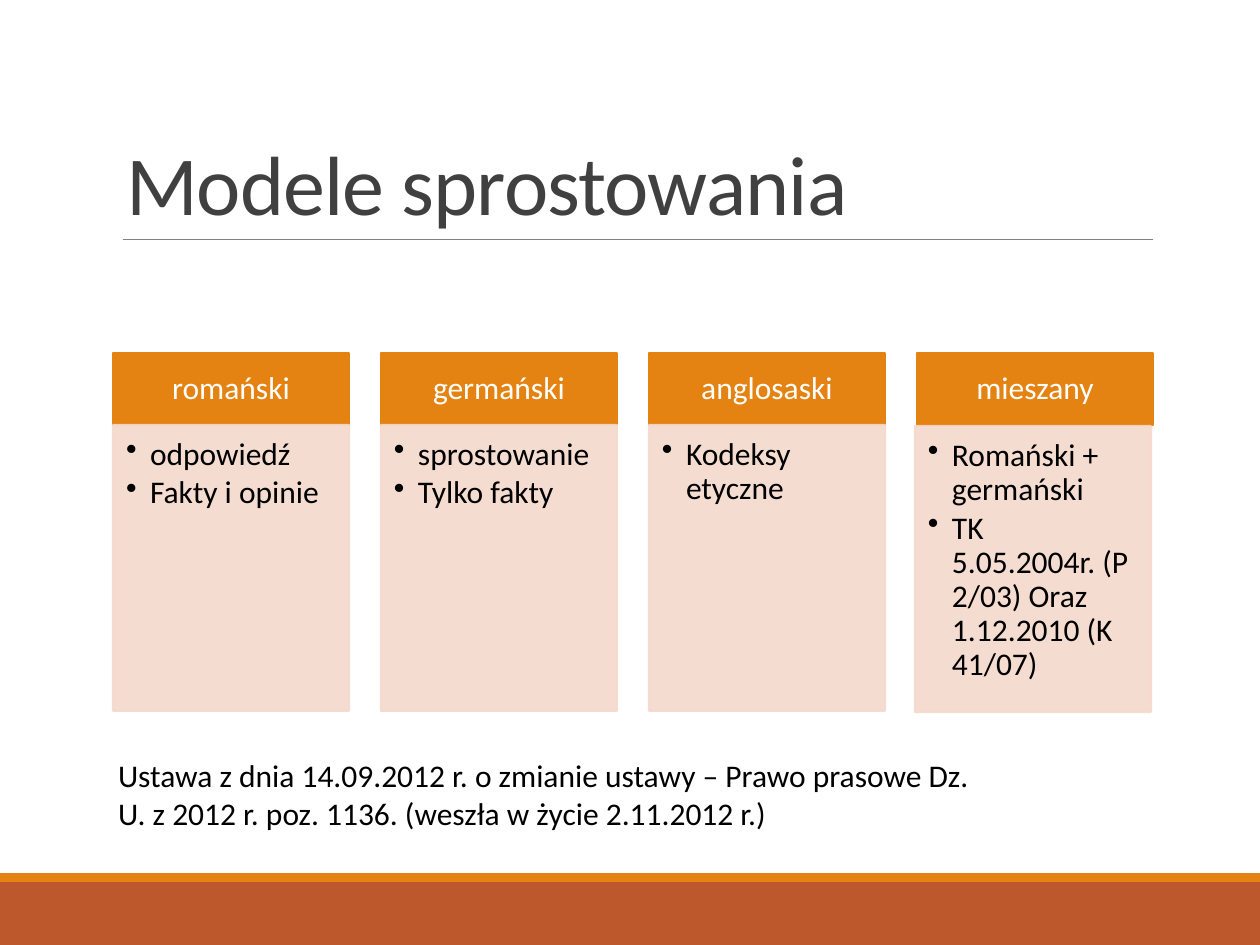
from dataclasses import dataclass

import lxml.etree
import pptx
import pptx.dml.color
import pptx.enum.shapes
import pptx.enum.text
import pptx.oxml.ns
import pptx.util

EMU_PER_PX = 914400 / 126
FONT = "Calibri"
COLORS = {
    "orange": "E48312",
    "rust": "BD582C",
    "peach": "F5D9CC",
    "rule": "808080",
    "title": "404040",
    "white": "FFFFFF",
    "black": "000000",
}
ANCHOR = pptx.enum.text.MSO_ANCHOR
ALIGN = pptx.enum.text.PP_ALIGN


@dataclass(frozen=True)
class Area:
    left: int
    top: int
    width: int
    height: int


@dataclass(frozen=True)
class Model:
    name: str
    points: tuple[str, ...]
    shift_x: int = 0
    shift_y: int = 0


MODELS = (
    Model("romański", ("odpowiedź", "Fakty i opinie")),
    Model("germański", ("sprostowanie", "Tylko fakty")),
    Model("anglosaski", ("Kodeksy etyczne",)),
    Model(
        "mieszany",
        ("Romański + germański", "TK 5.05.2004r. (P 2/03) Oraz 1.12.2010 (K 41/07)"),
        shift_x=-2,
        shift_y=1,
    ),
)
FIRST_HEADER = Area(113, 353, 236, 72)
COLUMN_STEP = 268
BODY_HEIGHT = 286
BULLET_INDENT = 24


def px(value: int) -> pptx.util.Emu:
    return pptx.util.Emu(round(value * EMU_PER_PX))


def color(name: str) -> pptx.dml.color.RGBColor:
    return pptx.dml.color.RGBColor.from_string(COLORS[name])


def place(area: Area) -> tuple[pptx.util.Emu, ...]:
    return px(area.left), px(area.top), px(area.width), px(area.height)


def add_child(parent, tag: str, **attributes: str):
    return lxml.etree.SubElement(parent, pptx.oxml.ns.qn(tag), **attributes)


def add_rectangle(page, area: Area, fill: str, outlined: bool = False, opacity: int = 100):
    box = page.shapes.add_shape(pptx.enum.shapes.MSO_SHAPE.RECTANGLE, *place(area))
    box.shadow.inherit = False
    box.fill.solid()
    box.fill.fore_color.rgb = color(fill)
    if outlined:
        box.line.color.rgb = color(fill)
        box.line.width = pptx.util.Pt(1.25)
    else:
        box.line.fill.background()
    if opacity < 100:
        for tint in box.element.spPr.iter(pptx.oxml.ns.qn("a:srgbClr")):
            add_child(tint, "a:alpha", val=str(opacity * 1000))
    return box


def set_frame(box, anchor, insets: tuple[int, int, int, int] = (13, 6, 13, 6)):
    frame = box.text_frame
    frame.word_wrap = True
    frame.vertical_anchor = anchor
    frame.margin_left, frame.margin_top, frame.margin_right, frame.margin_bottom = map(px, insets)
    return frame


def add_span(para, text: str, fill: str, size: int = 18):
    span = para.add_run()
    span.text = text
    span.font.name = FONT
    span.font.size = pptx.util.Pt(size)
    span.font.color.rgb = color(fill)
    return span


def add_bullet(para, text: str) -> None:
    properties = para._p.get_or_add_pPr()
    properties.set("marL", str(px(BULLET_INDENT)))
    properties.set("indent", str(-px(BULLET_INDENT)))
    add_child(properties, "a:buChar", char="•")
    para.level = 1
    para.alignment = ALIGN.LEFT
    para.line_spacing = 0.9
    para.space_after = pptx.util.Pt(2.7)
    add_span(para, text, "black")


def add_model(page, model: Model, column: int) -> None:
    first = FIRST_HEADER
    left = first.left + column * COLUMN_STEP
    header = add_rectangle(
        page, Area(left, first.top, first.width, first.height), "orange", outlined=True
    )
    para = set_frame(header, ANCHOR.MIDDLE, (18, 10, 18, 10)).paragraphs[0]
    para.alignment = ALIGN.CENTER
    para.line_spacing = 0.9
    add_span(para, model.name, "white")

    body_area = Area(
        left + model.shift_x,
        first.top + first.height + model.shift_y,
        first.width,
        BODY_HEIGHT,
    )
    body = add_rectangle(page, body_area, "peach", outlined=True, opacity=90)
    frame = set_frame(body, ANCHOR.TOP, (13, 13, 18, 20))
    for index, point in enumerate(model.points):
        add_bullet(frame.add_paragraph() if index else frame.paragraphs[0], point)


def add_rule(page, left: int, right: int, top: int) -> None:
    rule = page.shapes.add_connector(
        pptx.enum.shapes.MSO_CONNECTOR.STRAIGHT, px(left), px(top), px(right), px(top)
    )
    rule.line.color.rgb = color("rule")
    rule.line.width = pptx.util.Pt(0.5)
    add_child(rule.element.spPr, "a:effectLst")


def add_title(page, text: str) -> None:
    box = page.shapes.add_textbox(*place(Area(113, 39, 1040, 200)))
    para = set_frame(box, ANCHOR.BOTTOM).paragraphs[0]
    para.line_spacing = 0.85
    span = add_span(para, text, "title", 48)
    span._r.get_or_add_rPr().set("spc", "-50")


def add_note(page, text: str) -> None:
    box = page.shapes.add_textbox(*place(Area(105, 750, 890, 127)))
    add_span(set_frame(box, ANCHOR.TOP).paragraphs[0], text, "black")


def main() -> None:
    """Build the slide on the models of press corrections."""
    deck = pptx.Presentation()
    deck.slide_width, deck.slide_height = px(1260), px(945)
    page = deck.slides.add_slide(deck.slide_layouts[6])
    add_rectangle(page, Area(0, 882, 1260, 63), "rust")
    add_rectangle(page, Area(0, 873, 1260, 9), "orange")
    add_rule(page, 123, 1153, 239)
    add_title(page, "Modele sprostowania")
    for column, model in enumerate(MODELS):
        add_model(page, model, column)
    add_note(
        page,
        "Ustawa z dnia 14.09.2012 r. o zmianie ustawy – Prawo prasowe Dz. U. "
        "z 2012 r. poz. 1136. (weszła w życie 2.11.2012 r.)",
    )
    deck.save("out.pptx")


if __name__ == "__main__":
    main()
